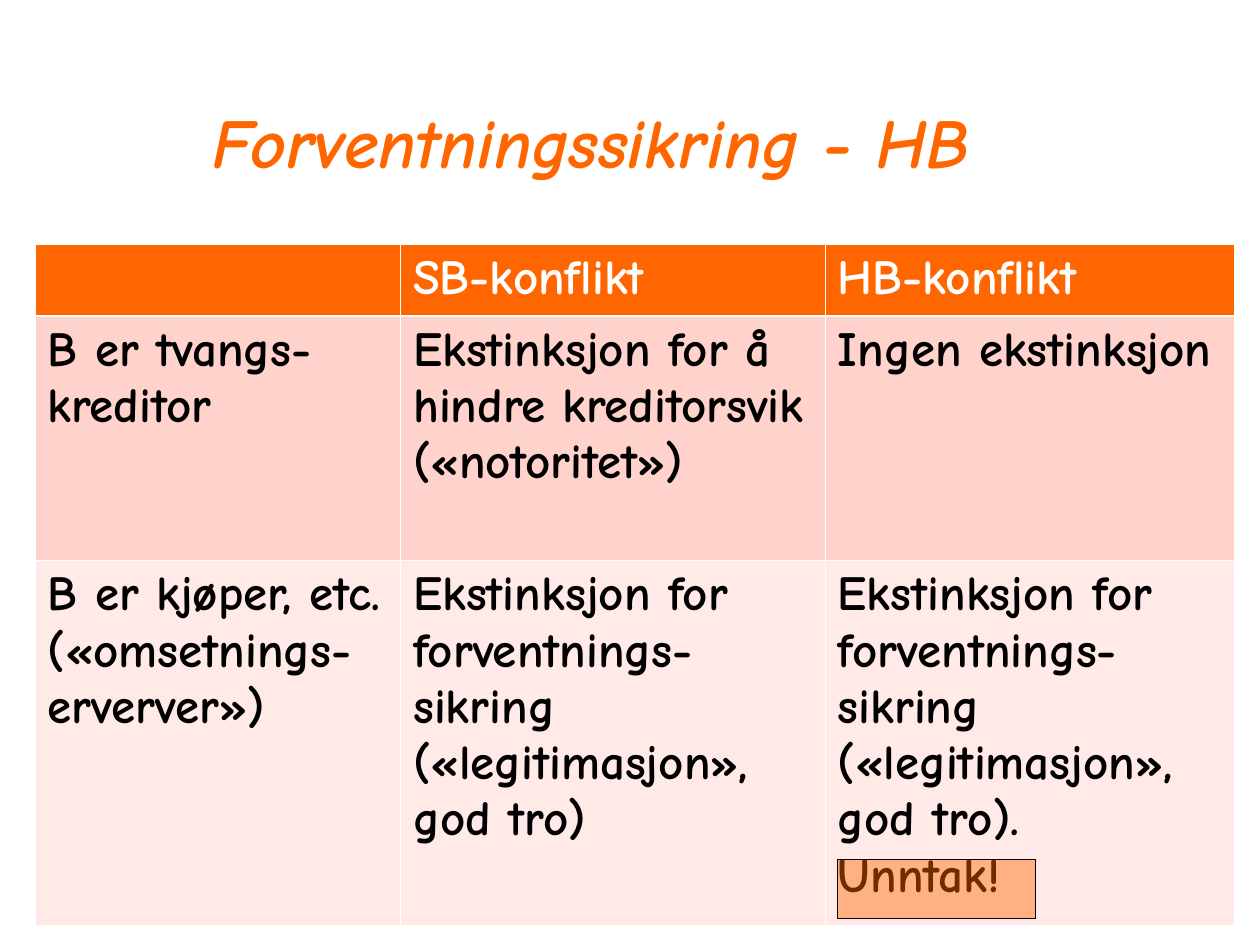
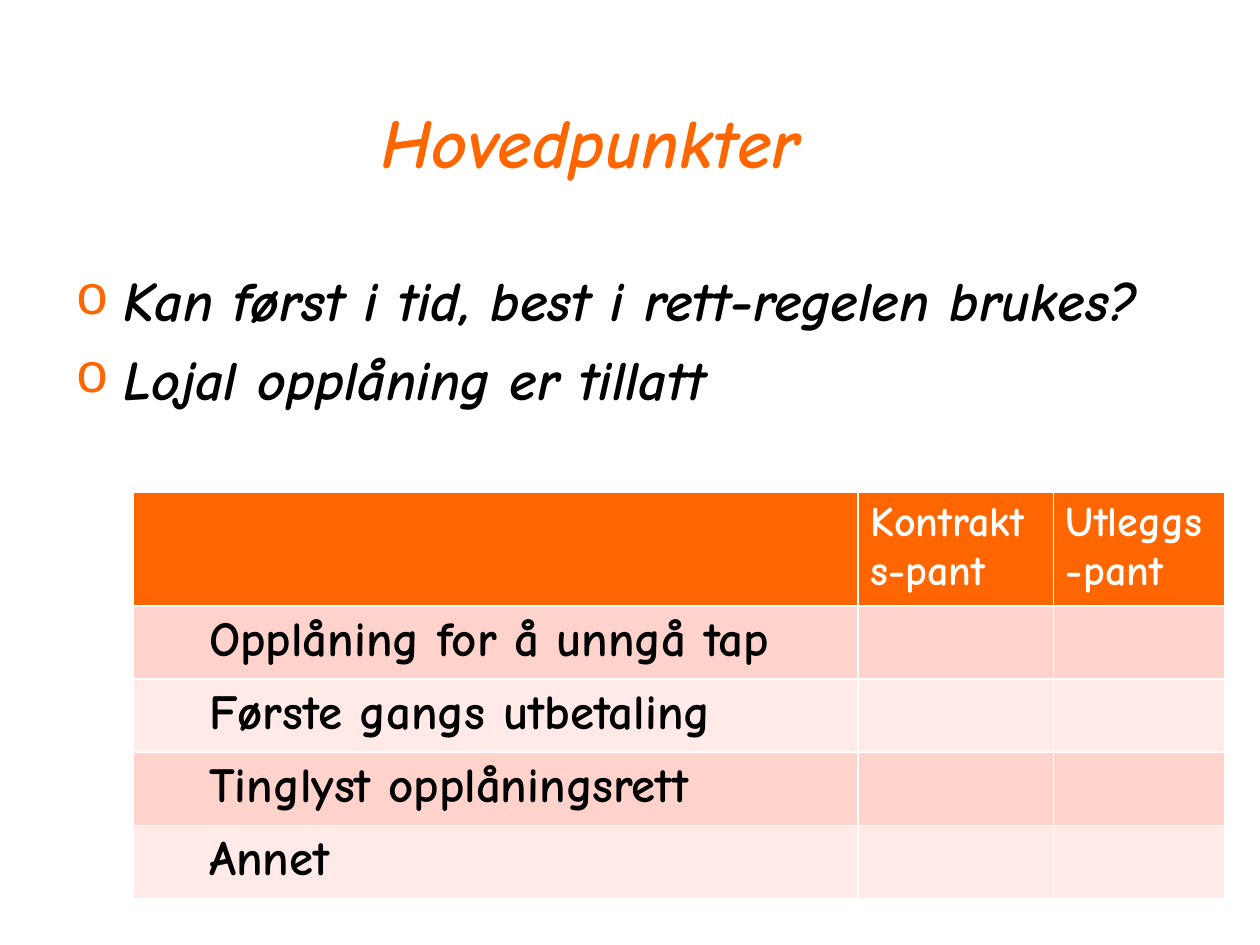
from lxml.etree import SubElement
from pptx import Presentation
from pptx.dml.color import RGBColor
from pptx.enum.shapes import MSO_SHAPE
from pptx.enum.text import MSO_ANCHOR, PP_ALIGN
from pptx.oxml.ns import qn
from pptx.util import Inches, Pt

COLORS = {
    "accent": "FF6600",
    "text": "000000",
    "header_text": "FFFFFF",
    "odd_row": "FFD3CC",
    "even_row": "FFEAE7",
}
FONT = "Comic Neue"


class Deck:
    """Holds the shared style and the slide being built."""

    def __init__(self):
        self.presentation = Presentation()
        self.presentation.slide_width = Inches(10)
        self.presentation.slide_height = Inches(7.5)
        self.slide = None

    def color(self, name):
        return RGBColor.from_string(COLORS[name])

    def style(self, paragraph, size, color, italic=False):
        font = paragraph.font
        font.name, font.size = FONT, Pt(size)
        font.bold, font.italic = True, italic
        font.color.rgb = self.color(color)

    def text_frame(self, left, top, width, height):
        box = self.slide.shapes.add_textbox(
            Inches(left), Inches(top), Inches(width), Inches(height))
        box.text_frame.word_wrap = True
        return box.text_frame

    def add_slide(self, heading):
        self.slide = self.presentation.slides.add_slide(
            self.presentation.slide_layouts[6])
        title = self.text_frame(0.44, 0.25, 8.5, 1.25)
        title.vertical_anchor = MSO_ANCHOR.BOTTOM
        title.text = heading
        title.paragraphs[0].alignment = PP_ALIGN.CENTER
        self.style(title.paragraphs[0], 40, "accent", italic=True)

    def add_bullets(self, points, left, top, width, height):
        body = self.text_frame(left, top, width, height)
        body.text = "\n".join(points)
        for index, point in enumerate(body.paragraphs):
            if index:
                point.space_before = Pt(6.4)
            properties = point._p.get_or_add_pPr()
            properties.set("marL", str(Inches(0.38)))
            properties.set("indent", str(-Inches(0.38)))
            bullet_color = SubElement(properties, qn("a:buClr"))
            SubElement(bullet_color, qn("a:srgbClr")).set("val", COLORS["accent"])
            SubElement(properties, qn("a:buFont")).set("typeface", "Courier New")
            SubElement(properties, qn("a:buChar")).set("char", "o")
            self.style(point, 32, "text", italic=True)

    def add_table(self, rows, left, top, widths, heights, header_size, label_indent=0):
        table = self.slide.shapes.add_table(
            len(rows), len(widths), Inches(left), Inches(top),
            Inches(sum(widths)), Inches(sum(heights))).table
        for column, width in zip(table.columns, widths):
            column.width = Inches(width)
        for row_index, (row, height) in enumerate(zip(rows, heights)):
            table.rows[row_index].height = Inches(height)
            band = "odd_row" if row_index % 2 else "even_row"
            for column_index, wording in enumerate(row):
                cell = table.cell(row_index, column_index)
                cell.fill.solid()
                cell.fill.fore_color.rgb = self.color(band if row_index else "accent")
                if not wording:
                    continue
                cell.text = wording
                paragraph = cell.text_frame.paragraphs[0]
                if row_index and not column_index and label_indent:
                    paragraph._p.get_or_add_pPr().set("marL", str(Inches(label_indent)))
                if row_index:
                    self.style(paragraph, 28, "text")
                else:
                    self.style(paragraph, header_size, "header_text")

    def add_highlight(self, left, top, width, height, opacity):
        highlight = self.slide.shapes.add_shape(
            MSO_SHAPE.RECTANGLE, Inches(left), Inches(top), Inches(width), Inches(height))
        highlight.shadow.inherit = False
        highlight.fill.solid()
        highlight.fill.fore_color.rgb = self.color("accent")
        tint = highlight._element.spPr.find(qn("a:solidFill"))[0]
        SubElement(tint, qn("a:alpha")).set("val", str(opacity * 1000))
        highlight.line.color.rgb = self.color("text")
        highlight.line.width = Pt(0.75)


def main():
    deck = Deck()

    deck.add_slide("Forventningssikring - HB")
    conflicts = [
        ("", "SB-konflikt", "HB-konflikt"),
        ("B er tvangs-kreditor",
         "Ekstinksjon for å hindre kreditorsvik («notoritet»)",
         "Ingen ekstinksjon"),
        ("B er kjøper, etc. («omsetnings-erverver»)",
         "Ekstinksjon for forventnings-sikring («legitimasjon», god tro)",
         "Ekstinksjon for forventnings-sikring («legitimasjon», god tro).\vUnntak!"),
    ]
    deck.add_table(conflicts, 0.28, 1.94, (2.9, 3.37, 3.25), (0.56, 1.94, 2.86), 28)
    deck.add_highlight(6.65, 6.82, 1.57, 0.47, opacity=43)

    deck.add_slide("Hovedpunkter")
    deck.add_bullets(
        ["Kan først i tid, best i rett-regelen brukes?", "Lojal opplåning er tillatt"],
        0.5, 2.06, 8.94, 4.6)
    advances = ["Opplåning for å unngå tap", "Første gangs utbetaling",
                "Tinglyst opplåningsrett", "Annet"]
    liens = [("", "Kontrakts-pant", "Utleggs-pant")]
    liens += [(advance, "", "") for advance in advances]
    deck.add_table(liens, 1.06, 3.91, (5.75, 1.55, 1.36), [0.58] * len(liens), 24,
                   label_indent=0.5)

    deck.presentation.save("out.pptx")


if __name__ == "__main__":
    main()
